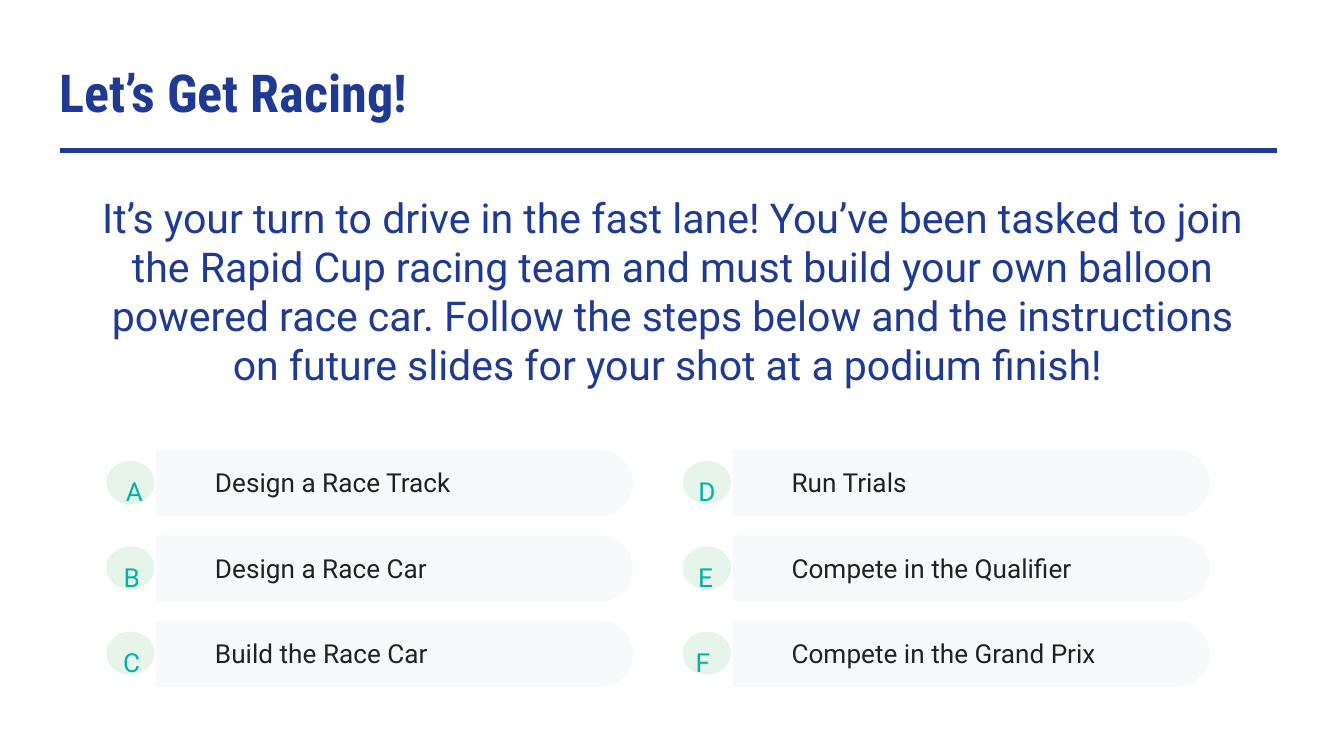
"""Build a slide that sets out six steps of a balloon car race."""
from pptx import Presentation
from pptx.dml.color import RGBColor
from pptx.enum.shapes import MSO_CONNECTOR, MSO_SHAPE
from pptx.enum.text import MSO_ANCHOR, PP_ALIGN
from pptx.oxml.ns import qn
from pptx.util import Inches, Pt
from lxml.etree import SubElement

COLORS = {
    "navy": "1F3A93",
    "teal": "00B2A9",
    "mint": "E6F4EA",
    "pale": "F8F9FA",
    "ink": "202124",
}
BODY = (
    "It’s your turn to drive in the fast lane! You’ve been tasked to join "
    "the Rapid Cup racing team and must build your own balloon powered race car. "
    "Follow the steps below and the instructions on future slides for your shot "
    "at a podium finish! "
)
STEPS = [
    ("A", 0.21, "Design a Race Track"),
    ("B", 0.19, "Design a Race Car"),
    ("C", 0.19, "Build the Race Car"),
    ("D", 0.18, "Run Trials"),
    ("E", 0.17, "Compete in the Qualifier"),
    ("F", 0.15, "Compete in the Grand Prix"),
]
ROWS = 3
LEFT, RIGHT = 0.79, 5.08
TOP, LAST = 3.43, 4.7
GAP = (LAST - TOP) / (ROWS - 1)


def color(name):
    return RGBColor.from_string(COLORS[name])


def write(frame, text, size=14, font="Roboto", ink="ink", bold=False,
          align=PP_ALIGN.LEFT, anchor=MSO_ANCHOR.TOP, inset=0.0):
    frame.word_wrap = True
    frame.vertical_anchor = anchor
    frame.margin_left = frame.margin_right = Inches(inset)
    frame.margin_top = frame.margin_bottom = Inches(inset)
    line = frame.paragraphs[0]
    line.alignment = align
    run = line.add_run()
    run.text = text
    run.font.name = font
    run.font.size = Pt(size)
    run.font.bold = bold
    run.font.color.rgb = color(ink)


class Deck:
    def __init__(self):
        self.show = Presentation()
        self.show.slide_width = Inches(10)
        self.show.slide_height = Inches(10 * 9 / 16)
        self.slide = self.show.slides.add_slide(self.show.slide_layouts[5])
        self.shapes = self.slide.shapes

    def title(self, text, x, y, w, h, **style):
        box = self.shapes.title
        box.left, box.top = Inches(x), Inches(y)
        box.width, box.height = Inches(w), Inches(h)
        write(box.text_frame, text, **style)

    def text(self, text, x, y, w, h, **style):
        box = self.shapes.add_textbox(Inches(x), Inches(y), Inches(w), Inches(h))
        write(box.text_frame, text, **style)

    def rule(self, x, y, end, ink, width):
        line = self.shapes.add_connector(
            MSO_CONNECTOR.STRAIGHT, Inches(x), Inches(y), Inches(end), Inches(y))
        line.line.color.rgb = color(ink)
        line.line.width = Pt(width)
        SubElement(line._element.spPr, qn("a:effectLst"))

    def shape(self, kind, x, y, w, h, fill):
        shape = self.shapes.add_shape(kind, Inches(x), Inches(y), Inches(w), Inches(h))
        shape.shadow.inherit = False
        shape.fill.solid()
        shape.fill.fore_color.rgb = color(fill)
        shape.line.fill.background()
        return shape

    def pill(self, x, y, w, h, fill):
        shape = self.shape(MSO_SHAPE.ROUND_2_SAME_RECTANGLE,
                           x + (w - h) / 2, y + (h - w) / 2, h, w, fill)
        shape.rotation = 270
        shape.adjustments[0] = 0
        shape.adjustments[1] = 0.5

    def step(self, x, y, mark, shift, label):
        self.pill(x + 0.37, y - 0.08, 3.55, 0.49, "pale")
        self.shape(MSO_SHAPE.OVAL, x, y, 0.36, 0.32, "mint")
        self.text(label, x + 0.81, y, 3.03, 0.32, anchor=MSO_ANCHOR.MIDDLE)
        self.text(mark, x + shift - 0.1, y + 0.11, 0.2, 0.23,
                  ink="teal", align=PP_ALIGN.CENTER)


def main():
    deck = Deck()
    deck.title("Let’s Get Racing!", 0.34, 0.35, 9.32, 0.63, size=28,
               font="Roboto Condensed", ink="navy", bold=True, inset=0.1)
    deck.rule(0.45, 1.12, 9.5, "navy", 2.25)
    deck.text(BODY, 0.63, 1.33, 8.75, 1.83, size=22, ink="navy",
              align=PP_ALIGN.CENTER, inset=0.1)
    for i, (mark, shift, label) in enumerate(STEPS):
        col, row = divmod(i, ROWS)
        deck.step((LEFT, RIGHT)[col], TOP + row * GAP, mark, shift, label)
    deck.show.save("out.pptx")


if __name__ == "__main__":
    main()
